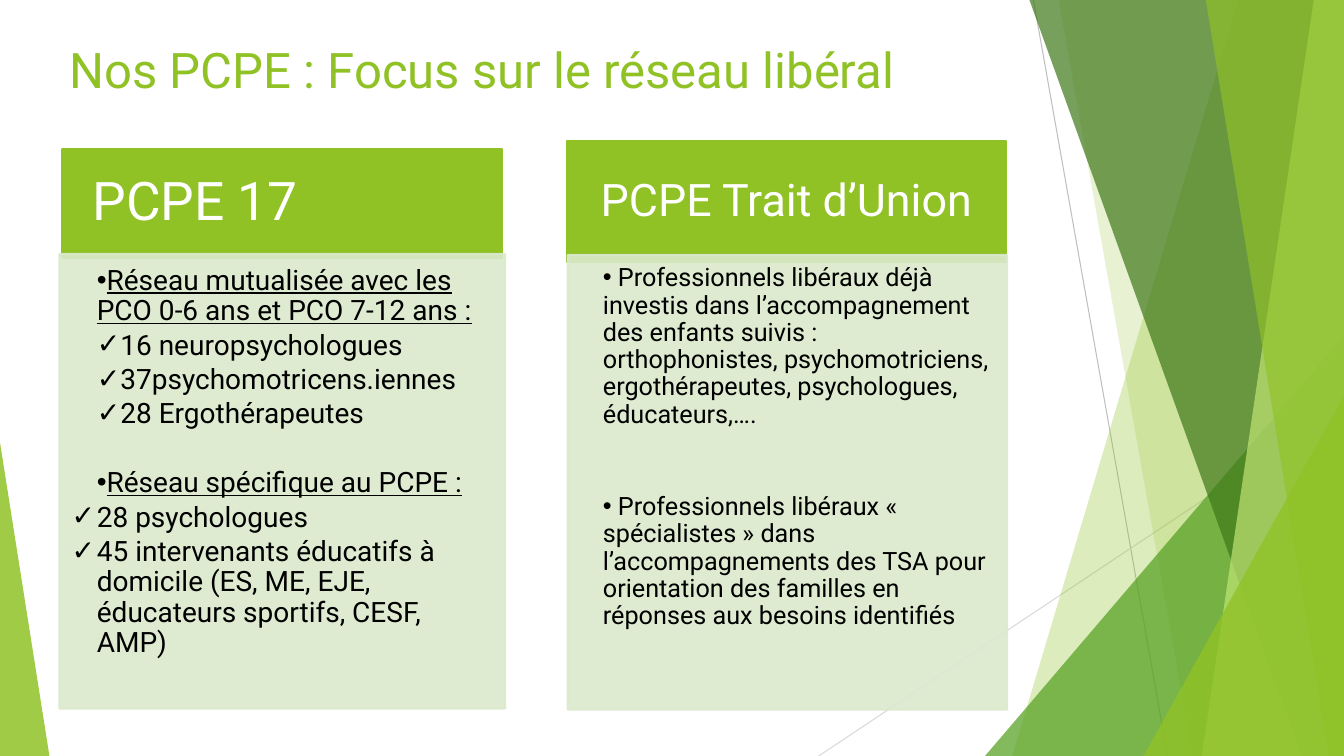
from pptx import Presentation
from pptx.dml.color import RGBColor as RGB
from pptx.enum.shapes import MSO_CONNECTOR as LINK, MSO_SHAPE as SHAPE
from pptx.enum.text import MSO_ANCHOR as ANCHOR, MSO_AUTO_SIZE as AUTO, PP_ALIGN as ALIGN
from pptx.oxml.ns import qn
from pptx.util import Inches, Pt
from lxml.etree import SubElement

GREEN, PALE, WHITE, BLACK = "90C226", "DBE9CD", "FFFFFF", "000000"
WIDE, HIGH = 13.33, 7.5


def tint(code):
    return RGB.from_string(code)


class Deck:
    font = "Roboto"

    def __init__(self):
        self.prs = Presentation()
        self.prs.slide_width = Inches(WIDE)
        self.prs.slide_height = Inches(HIGH)
        self.slide = self.prs.slides.add_slide(self.prs.slide_layouts[4])
        self.shapes = self.slide.shapes
        self.holds = {p.placeholder_format.idx: p for p in self.slide.placeholders}

    def paint(self, shape, color, alpha=100, edge=0):
        shape.fill.solid()
        shape.fill.fore_color.rgb = tint(color)
        if edge:
            shape.line.color.rgb = tint(color)
            shape.line.width = Pt(edge)
        else:
            shape.line.fill.background()
        if alpha < 100:
            for node in shape.element.spPr.iter(qn("a:srgbClr")):
                SubElement(node, qn("a:alpha")).set("val", str(alpha * 1000))

    def line(self, start, end, color):
        link = self.shapes.add_connector(LINK.STRAIGHT, *map(Inches, start + end))
        link.line.color.rgb = tint(color)
        link.line.width = Pt(0.75)
        SubElement(link.element.spPr, qn("a:effectLst"))

    def band(self, top, foot, color, alpha):
        first, *rest = [(Inches(x), Inches(y)) for x, y in
                        ((top, 0), (WIDE, 0), (WIDE, HIGH), (foot, HIGH))]
        form = self.shapes.build_freeform(*first)
        form.add_line_segments(rest, close=True)
        shape = form.convert_to_shape()
        shape.shadow.inherit = False
        self.paint(shape, color, alpha)

    def wedge(self, left, top, width, peak, color, alpha):
        box = map(Inches, (left, top, width, HIGH - top))
        shape = self.shapes.add_shape(SHAPE.ISOSCELES_TRIANGLE, *box)
        shape.adjustments[0] = peak
        shape.shadow.inherit = False
        self.paint(shape, color, alpha)

    def hold(self, key, box, pad, anchor):
        shape = self.holds[key]
        self.shapes.element.append(shape.element)
        shape.left, shape.top, shape.width, shape.height = map(Inches, box)
        frame = shape.text_frame
        frame.word_wrap = True
        frame.auto_size = AUTO.NONE
        frame.vertical_anchor = anchor
        (frame.margin_left, frame.margin_top,
         frame.margin_right, frame.margin_bottom) = map(Inches, pad)
        return shape

    def style(self, para, size, color, under=False):
        for run in para.runs:
            font = run.font
            font.name, font.size = self.font, Pt(size)
            font.bold, font.underline = False, under
            font.color.rgb = tint(color)

    def title(self, text, box):
        frame = self.hold(0, box, (0.1, 0.05, 0.1, 0.05), ANCHOR.TOP).text_frame
        frame.text = text
        frame.paragraphs[0].alignment = ALIGN.LEFT
        self.style(frame.paragraphs[0], 35, GREEN)

    def head(self, key, text, box, pad, size, align):
        shape = self.hold(key, box, pad, ANCHOR.MIDDLE)
        self.paint(shape, GREEN, edge=1.5)
        shape.text_frame.text = text
        para = shape.text_frame.paragraphs[0]
        para.alignment, para.line_spacing = align, 0.9
        para.space_before = Pt(0)
        self.style(para, size, WHITE)

    def body(self, key, items, box, pad, size):
        shape = self.hold(key, box, pad, ANCHOR.TOP)
        self.paint(shape, PALE, 90, 1.5)
        frame = shape.text_frame
        frame.text = "\n".join(item[0] for item in items)
        for para, (_, mark, hang, gap, under) in zip(frame.paragraphs, items):
            para.level = 1
            para.alignment, para.line_spacing = ALIGN.LEFT, 0.9
            para.space_before, para.space_after = Pt(gap), Pt(size * 0.15)
            props = para._p.get_or_add_pPr()
            props.set("marL", str(Inches(0.25)))
            props.set("indent", str(Inches(-hang)))
            SubElement(props, qn("a:buChar")).set("char", mark)
            self.style(para, size, BLACK, under)


def main():
    deck = Deck()
    deck.line((10.25, 0), (11.58, HIGH), "BFBFBF")
    deck.line((WIDE, 4.03), (8.12, HIGH), "D9D9D9")
    deck.band(12.28, 10.04, GREEN, 30)
    deck.band(10.5, 11.83, GREEN, 20)
    deck.wedge(9.77, 3.33, 3.56, 1, "54A021", 72)
    deck.band(10.21, 12.91, "3F7819", 70)
    deck.band(13.03, 11.92, "C0E474", 70)
    deck.band(11.96, 13.18, GREEN, 65)
    deck.wedge(11.34, 3.93, 1.99, 1, GREEN, 80)
    deck.wedge(0, 4.39, 0.49, 0, GREEN, 85)

    deck.head(1, "PCPE 17", (0.62, 1.48, 4.36, 1.08),
              (0.3, 0.17, 0.3, 0.17), 38, ALIGN.LEFT)
    deck.body(2, [
        ("Réseau mutualisée avec les PCO 0-6 ans et PCO 7-12 ans :", "•", 0, 0, True),
        ("16 neuropsychologues", "✓", 0, 0, False),
        ("37psychomotricens.iennes", "✓", 0, 0, False),
        ("28 Ergothérapeutes", "✓", 0, 0, False),
        ("Réseau spécifique au PCPE :", "•", 0, 24.5, True),
        ("28 psychologues", "✓", 0.25, 0, False),
        ("45 intervenants éducatifs à domicile (ES, ME, EJE, éducateurs sportifs, "
         "CESF, AMP)", "✓", 0.25, 0, False),
    ], (0.59, 2.52, 4.42, 4.51), (0.12, 0.12, 0.16, 0.17), 20)

    deck.head(3, "PCPE Trait d’Union", (5.62, 1.4, 4.36, 1.2),
              (0.25, 0.14, 0.25, 0.14), 32, ALIGN.CENTER)
    deck.body(4, [
        (" Professionnels libéraux déjà investis dans l’accompagnement des enfants "
         "suivis : orthophonistes, psychomotriciens, ergothérapeutes, psychologues, "
         "éducateurs,….", "•", 0, 0, False),
        (" Professionnels libéraux « spécialistes » dans l’accompagnements des TSA "
         "pour orientation des familles en réponses aux besoins identifiés",
         "•", 0, 44, False),
    ], (5.63, 2.53, 4.36, 4.51), (0.1, 0.1, 0.14, 0.16), 18)

    deck.title("Nos PCPE : Focus sur le réseau libéral", (0.59, 0.34, 9.4, 1.23))
    deck.prs.save("out.pptx")


if __name__ == "__main__":
    main()
